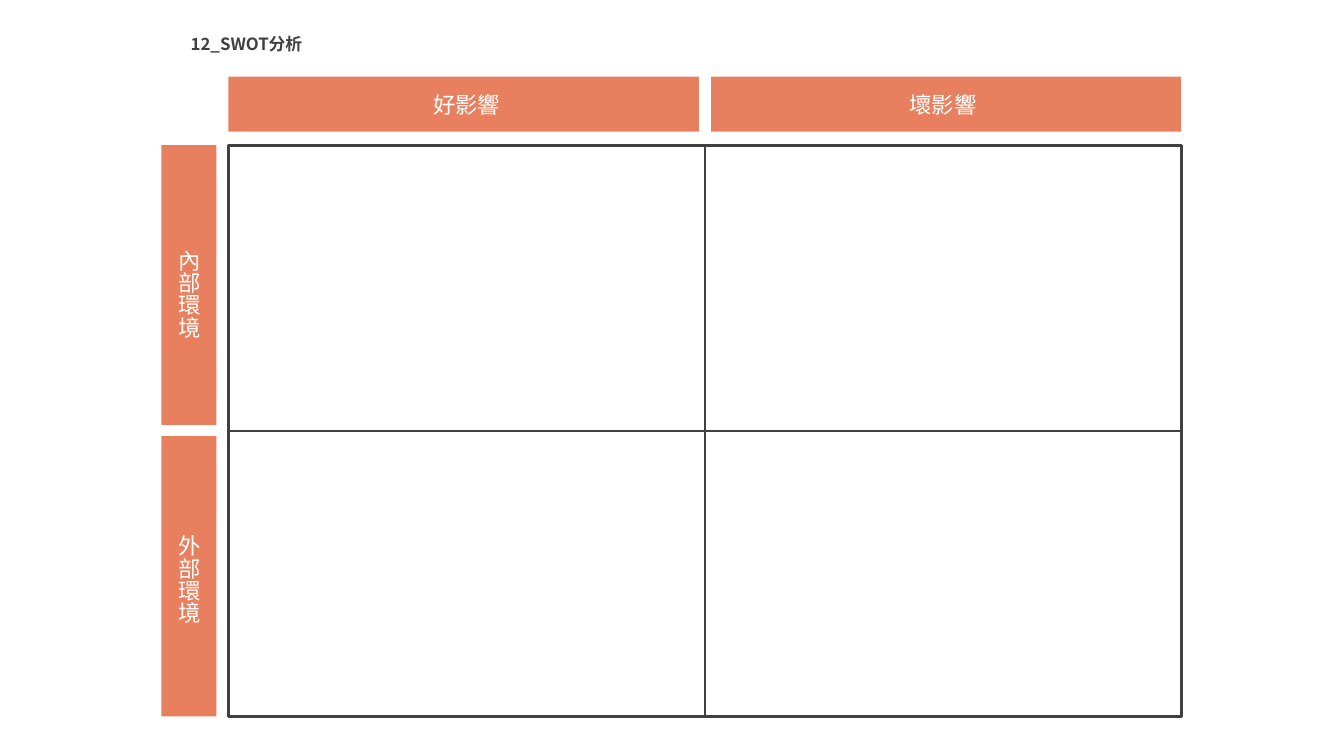
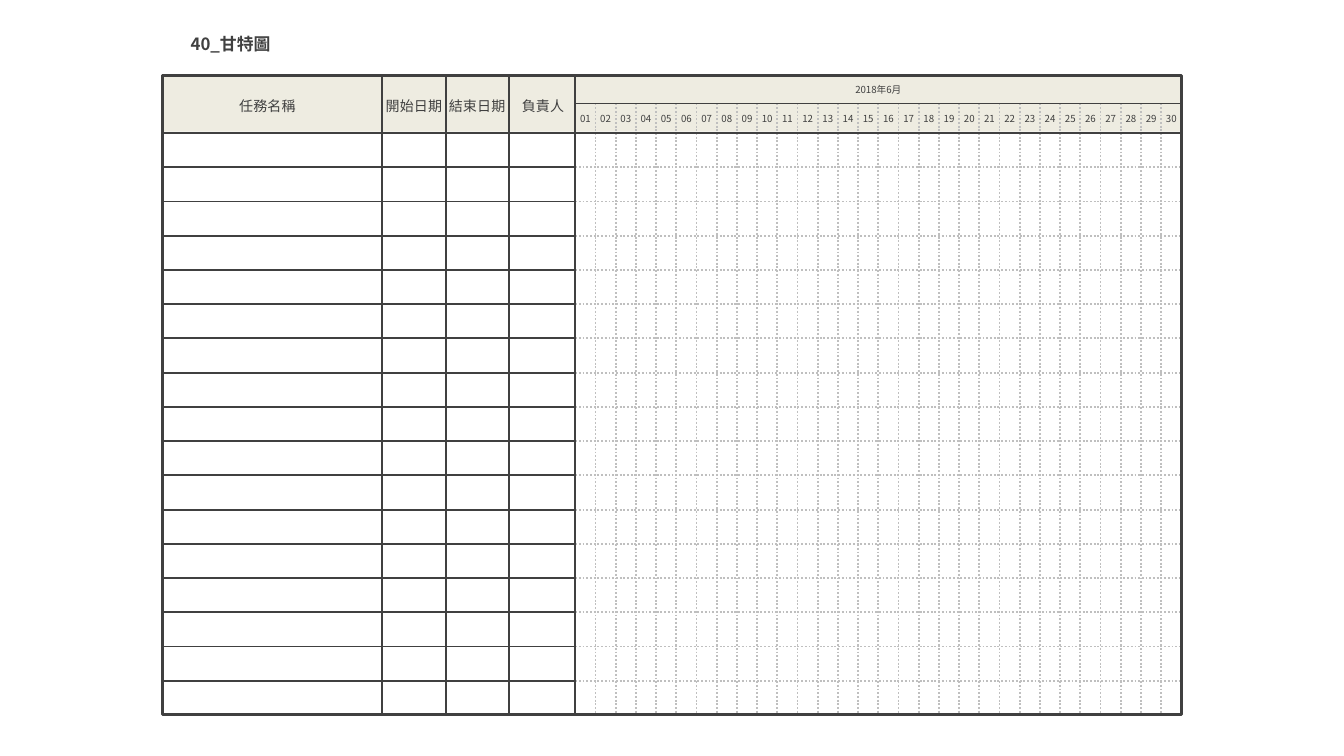
"""Build a SWOT grid slide and a Gantt chart slide."""
from lxml import etree
from pptx import Presentation
from pptx.dml.color import RGBColor
from pptx.enum.dml import MSO_LINE
from pptx.enum.shapes import MSO_CONNECTOR, MSO_SHAPE
from pptx.enum.text import MSO_ANCHOR as ANCHOR, MSO_AUTO_SIZE as FIT, PP_ALIGN as ALIGN
from pptx.oxml.ns import qn
from pptx.util import Inches, Pt

FONT = "Noto Sans CJK JP"
INK, WHITE, CORAL, CREAM, GREY = "404040", "FFFFFF", "E8805F", "EEECE1", "BFBFBF"

SWOT = {
    "title": ("12_SWOT分析", 1.12),
    "columns": ["好影響", "壞影響"],
    "rows": ["內部環境", "外部環境"],
    "frame": (1.7, 1.08, 7.09, 4.25),
    "band": 0.41,
    "column_top": 0.57,
    "row_left": 1.2,
    "column_label": (0.71, 0.3),
    "row_label": (0.4, 0.77),
}
GANTT = {
    "title": ("40_甘特圖", 0.84),
    "columns": [
        {"label": "任務名稱", "right": 2.84, "center": 1.99, "width": 0.62},
        {"label": "開始日期", "right": 3.32, "center": 3.08, "width": 0.62},
        {"label": "結束日期", "right": 3.79, "center": 3.55, "width": 0.62},
        {"label": "負責人", "right": 4.28, "center": 4.04, "width": 0.52},
    ],
    "month": "2018年6月",
    "days": 30,
    "tasks": 17,
    "frame": (1.21, 0.56, 7.58, 4.76),
    "header": 0.42,
    "header_line": 0.99,
}
SOLID = {"color": INK, "width": 1}
DOTTED = {"color": GREY, "width": 1, "dash": MSO_LINE.ROUND_DOT}
GAP = {"color": WHITE, "width": 6}
HEAVY = {"color": INK, "width": 1.5}


def rgb(color):
    return RGBColor.from_string(color)


def style_line(line, color, width, dash=None):
    line.color.rgb = rgb(color)
    line.width = Pt(width)
    if dash:
        line.dash_style = dash


def add_line(s, x1, y1, x2, y2, style):
    ln = s.shapes.add_connector(MSO_CONNECTOR.STRAIGHT, *map(Inches, (x1, y1, x2, y2)))
    style_line(ln.line, **style)
    etree.SubElement(ln._element.spPr, qn("a:effectLst"))
    return ln


def add_rect(s, box, fill=None, line=None):
    sp = s.shapes.add_shape(MSO_SHAPE.RECTANGLE, *map(Inches, box))
    sp.shadow.inherit = False
    if fill:
        sp.fill.solid()
        sp.fill.fore_color.rgb = rgb(fill)
    else:
        sp.fill.background()
    if line:
        style_line(sp.line, **line)
    else:
        sp.line.fill.background()
    return sp


def add_text(s, box, text, size, color=INK, bold=False, align=ALIGN.CENTER,
             anchor=ANCHOR.MIDDLE, vertical=False):
    tf = s.shapes.add_textbox(*map(Inches, box)).text_frame
    frame_format = {"word_wrap": False, "auto_size": FIT.SHAPE_TO_FIT_TEXT,
                    "vertical_anchor": anchor}
    for name, value in frame_format.items():
        setattr(tf, name, value)
    if vertical:
        tf._txBody.bodyPr.set("vert", "eaVert")
    p = tf.paragraphs[0]
    p.alignment = align
    r = p.add_run()
    r.text = text
    for name, value in {"name": FONT, "size": Pt(size), "bold": bold}.items():
        setattr(r.font, name, value)
    r.font.color.rgb = rgb(color)
    etree.SubElement(r._r.get_or_add_rPr(), qn("a:ea"), typeface=FONT)


def add_slide(prs, title, width):
    s = prs.slides.add_slide(prs.slide_layouts[6])
    add_text(s, (1.32, 0.2, width, 0.25), title, 9, bold=True,
             align=ALIGN.LEFT, anchor=ANCHOR.TOP)
    return s


def add_band(s, box, text, label_size, vertical=False):
    add_rect(s, box, fill=CORAL)
    x, y, w, h = box
    label_w, label_h = label_size
    label_box = (x + (w - label_w) / 2, y + (h - label_h) / 2, label_w, label_h)
    add_text(s, label_box, text, 12, color=WHITE, vertical=vertical)


def build_swot(prs):
    s = add_slide(prs, *SWOT["title"])
    left, top, width, height = SWOT["frame"]
    band, row_left, column_top = SWOT["band"], SWOT["row_left"], SWOT["column_top"]
    mid_x, mid_y = left + width / 2, top + height / 2
    for i, label in enumerate(SWOT["rows"]):
        add_band(s, (row_left, top + i * height / 2, band, height / 2), label,
                 SWOT["row_label"], vertical=True)
    for i, label in enumerate(SWOT["columns"]):
        add_band(s, (left + i * width / 2, column_top, width / 2, band), label,
                 SWOT["column_label"])
    add_line(s, row_left - 0.05, mid_y, row_left + band + 0.05, mid_y, GAP)
    add_line(s, mid_x, column_top - 0.05, mid_x, column_top + band + 0.05, GAP)

    frame = add_rect(s, SWOT["frame"], line=HEAVY)
    for ends, start, end in (
        ((mid_x, top, mid_x, top + height), 0, 2),
        ((left, mid_y, left + width, mid_y), 1, 3),
    ):
        ln = add_line(s, *ends, SOLID)
        ln.begin_connect(frame, start)
        ln.end_connect(frame, end)


def build_gantt(prs):
    s = add_slide(prs, *GANTT["title"])
    left, top, width, height = GANTT["frame"]
    right, bottom = left + width, top + height
    columns, days, tasks = GANTT["columns"], GANTT["days"], GANTT["tasks"]
    header, head_y = GANTT["header"], GANTT["header_line"]
    grid_x, month_y = columns[-1]["right"], top + header / 2
    day_w, row_h = (right - grid_x) / days, (bottom - head_y) / tasks

    head = add_rect(s, (left, top, width, header), fill=CREAM)
    for i in range(1, tasks):
        y = head_y + i * row_h
        add_line(s, grid_x, y, right, y, DOTTED)
        add_line(s, left, y, grid_x, y, SOLID)
    for i in range(days):
        x = grid_x + i * day_w
        if i:
            add_line(s, x, month_y, x, bottom, DOTTED)
        add_text(s, (x + day_w / 2 - 0.145, 0.79, 0.29, 0.19), f"{i + 1:02}", 5.2)
    for col in columns:
        add_line(s, col["right"], top, col["right"], bottom, SOLID)
        add_text(s, (col["center"] - col["width"] / 2, 0.68, col["width"], 0.23),
                 col["label"], 7.5, anchor=ANCHOR.TOP)
    add_text(s, ((grid_x + right) / 2 - 0.29, 0.57, 0.58, 0.19), GANTT["month"], 5.2)
    add_line(s, grid_x, month_y, right, month_y, SOLID).end_connect(head, 3)
    add_rect(s, GANTT["frame"], line=HEAVY)
    add_line(s, left, head_y, right, head_y, HEAVY)


def main():
    prs = Presentation()
    prs.slide_width = Inches(10)
    prs.slide_height = prs.slide_width * 9 // 16
    build_swot(prs)
    build_gantt(prs)
    prs.save("out.pptx")


if __name__ == "__main__":
    main()
